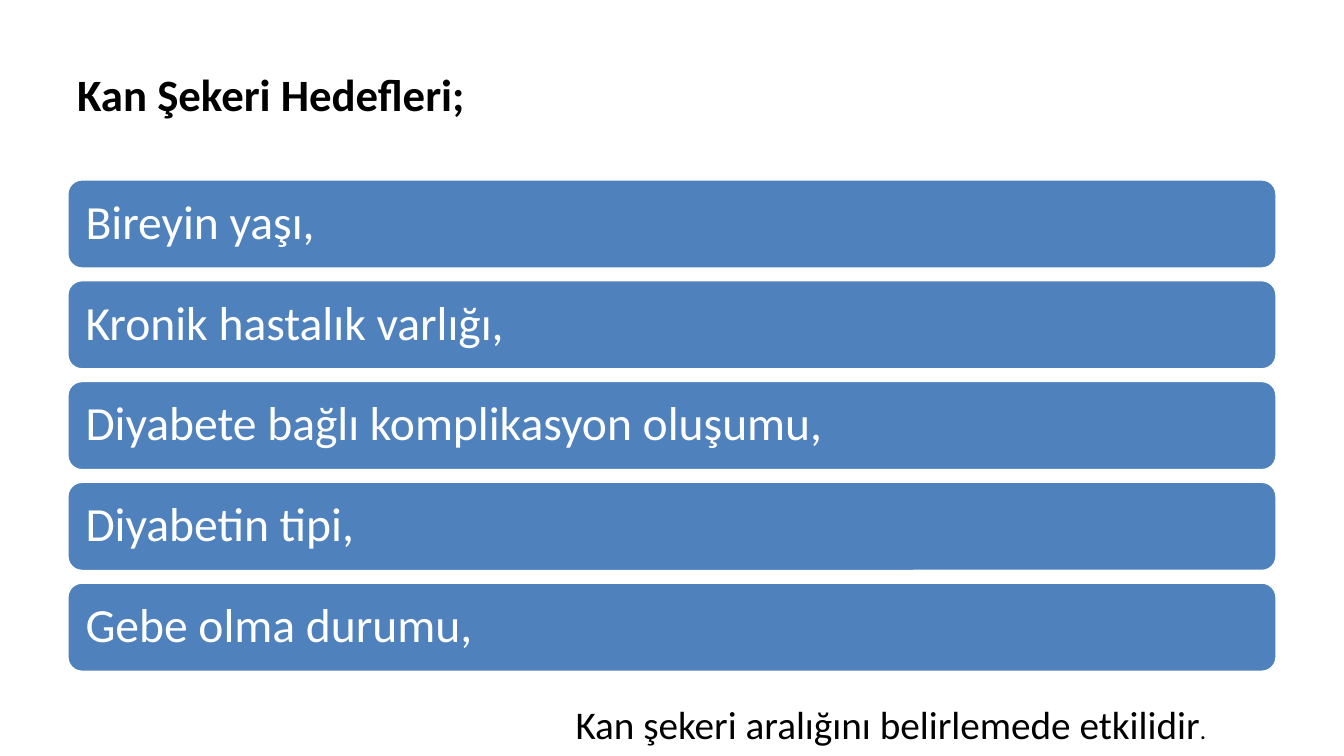
from pptx import Presentation
from pptx.dml.color import RGBColor
from pptx.enum.shapes import MSO_SHAPE
from pptx.enum.text import MSO_ANCHOR, PP_ALIGN
from pptx.util import Pt

FACTORS = [
    "Bireyin yaşı,",
    "Kronik hastalık varlığı,",
    "Diyabete bağlı komplikasyon oluşumu,",
    "Diyabetin tipi,",
    "Gebe olma durumu,",
]


def color(value):
    return RGBColor.from_string(value)


def format_run(r, size, hex_color, bold=False):
    r.font.name = "Calibri"
    r.font.size = Pt(size)
    r.font.bold = bold
    r.font.color.rgb = color(hex_color)


def add_text(slide, left, top, width, height, text, size, bold=False, anchor=MSO_ANCHOR.TOP):
    sp = slide.shapes.add_textbox(Pt(left), Pt(top), Pt(width), Pt(height))
    tf = sp.text_frame
    tf.word_wrap = True
    tf.vertical_anchor = anchor
    p = tf.paragraphs[0]
    p.text = text
    format_run(p.runs[0], size, "000000", bold)
    return p


def add_title(slide, left, top, width, height):
    add_text(slide, left, top, width, height, "Kan Şekeri Hedefleri;", 32, True, MSO_ANCHOR.MIDDLE)


def add_factor_bars(slide, left, top, width, height, gap=8):
    bar_height = (height - gap * (len(FACTORS) - 1)) / len(FACTORS)
    for i, factor in enumerate(FACTORS):
        bar_top = top + i * (bar_height + gap)
        sp = slide.shapes.add_shape(
            MSO_SHAPE.ROUNDED_RECTANGLE, Pt(left), Pt(bar_top), Pt(width), Pt(bar_height)
        )
        sp.shadow.inherit = False
        sp.fill.solid()
        sp.fill.fore_color.rgb = color("4F81BD")
        sp.line.color.rgb = color("FFFFFF")
        sp.line.width = Pt(2)
        tf = sp.text_frame
        tf.word_wrap = True
        tf.vertical_anchor = MSO_ANCHOR.MIDDLE
        tf.margin_left = tf.margin_right = tf.margin_top = tf.margin_bottom = Pt(10)
        p = tf.paragraphs[0]
        p.text = factor
        p.alignment = PP_ALIGN.LEFT
        p.line_spacing = 0.9
        format_run(p.runs[0], 34, "FFFFFF")


def add_conclusion(slide, left, top, width, height):
    p = add_text(slide, left, top, width, height, "Kan şekeri aralığını belirlemede etkilidir", 28)
    r = p.add_run()
    r.text = "."
    format_run(r, 18, "000000")


def main():
    prs = Presentation()
    prs.slide_width = Pt(960)
    prs.slide_height = Pt(540)
    slide = prs.slides.add_slide(prs.slide_layouts[6])
    add_title(slide, 48, 21.6, 864, 90)
    add_factor_bars(slide, 48, 128, 864, 352)
    add_conclusion(slide, 404, 497, 472, 41)
    prs.save("out.pptx")


if __name__ == "__main__":
    main()
